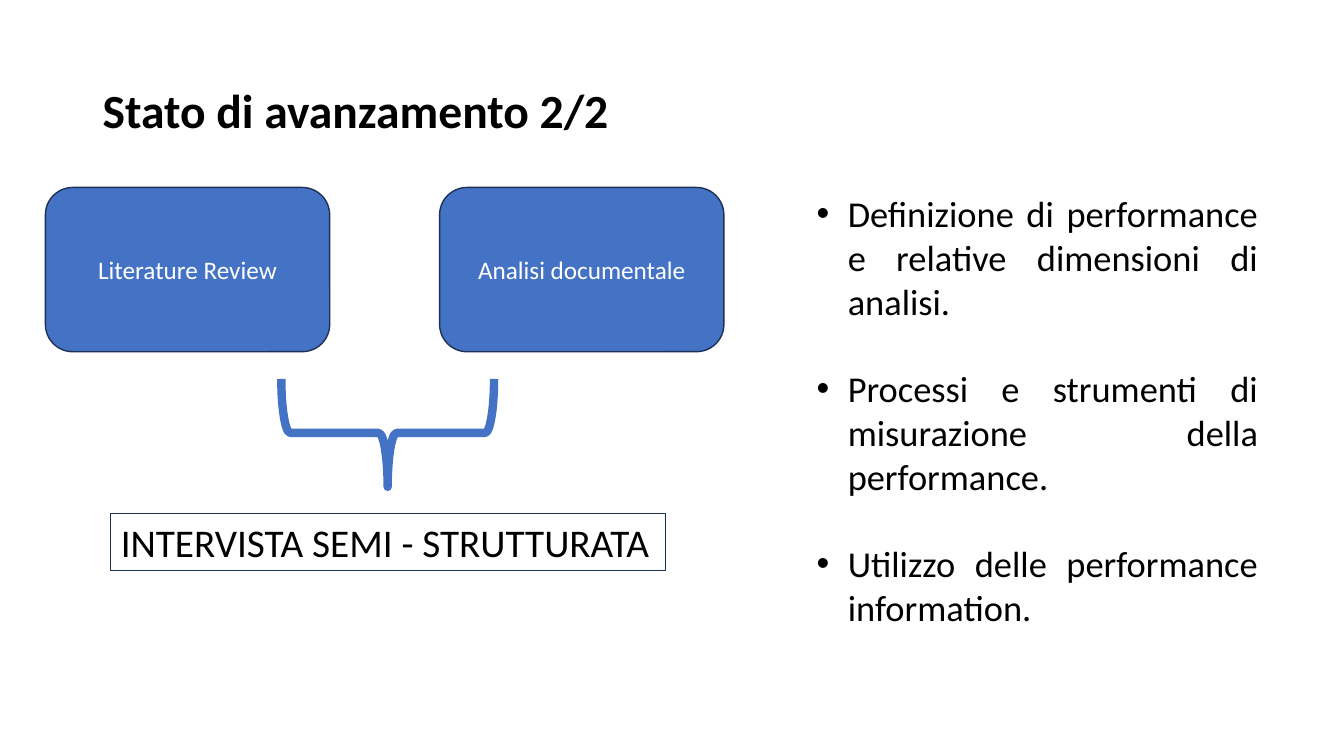
import pptx
import pptx.dml.color
import pptx.enum.shapes
import pptx.enum.text
import pptx.util
from lxml import etree

Inches = pptx.util.Inches
Pt = pptx.util.Pt
SHAPES = pptx.enum.shapes.MSO_SHAPE
ALIGN = pptx.enum.text.PP_ALIGN
ANCHOR = pptx.enum.text.MSO_ANCHOR

COLORS = {"blue": "4472C4", "navy": "1E3256", "black": "000000", "white": "FFFFFF"}
SOURCES = ["Literature Review", "Analisi documentale"]
FINDINGS = [
    "Definizione di performance e relative dimensioni di analisi.",
    "Processi e strumenti di misurazione della performance.",
    "Utilizzo delle performance information.",
]


def color(name):
    return pptx.dml.color.RGBColor.from_string(COLORS[name])


def write(shape, lines, size, font_color="black", bold=False, anchor=ANCHOR.TOP, **formats):
    """Fill a shape with one paragraph per line and return the paragraphs."""
    frame = shape.text_frame
    frame.word_wrap = True
    frame.vertical_anchor = anchor
    frame.text = "\n".join(lines)
    for paragraph in frame.paragraphs:
        for name, value in formats.items():
            setattr(paragraph, name, value)
        font = paragraph.runs[0].font
        for name, value in {"name": "Calibri", "size": Pt(size), "bold": bold}.items():
            setattr(font, name, value)
        font.color.rgb = color(font_color)
    return frame.paragraphs


def add_outlined(slide, kind, box, line_color, line_width, fill=None):
    shape = slide.shapes.add_shape(kind, *map(Inches, box))
    shape.shadow.inherit = False
    if fill:
        shape.fill.solid()
        shape.fill.fore_color.rgb = color(fill)
    else:
        shape.fill.background()
    shape.line.color.rgb = color(line_color)
    shape.line.width = Pt(line_width)
    return shape


def add_title(slide, box):
    title = slide.shapes.add_textbox(*map(Inches, box))
    write(title, ["Stato di avanzamento 2/2"], 34, bold=True,
          anchor=ANCHOR.MIDDLE, line_spacing=0.9)


def add_method(slide, left, top):
    """Two sources joined by a brace that points down to the interview."""
    for index, source in enumerate(SOURCES):
        box = (left + index * 3.91, top, 2.82, 1.63)
        card = add_outlined(slide, SHAPES.ROUNDED_RECTANGLE, box, "navy", 1, "blue")
        write(card, [source], 18, "white", anchor=ANCHOR.MIDDLE, alignment=ALIGN.CENTER)

    brace_box = (left + 2.86, top + 1.38, 1.07, 2.11)
    brace = add_outlined(slide, SHAPES.LEFT_BRACE, brace_box, "blue", 6)
    brace.rotation = 270

    interview_box = (left + 0.65, top + 3.23, 5.5, 0.57)
    interview = add_outlined(slide, SHAPES.RECTANGLE, interview_box, "navy", 0.75)
    write(interview, ["INTERVISTA SEMI - STRUTTURATA"], 28, alignment=ALIGN.LEFT)


def add_findings(slide, box):
    findings = slide.shapes.add_textbox(*map(Inches, box))
    paragraphs = write(findings, FINDINGS, 26, alignment=ALIGN.JUSTIFY, space_after=Pt(31.5))
    for paragraph in paragraphs:
        properties = paragraph._p.get_or_add_pPr()
        properties.set("marL", str(Inches(0.31)))
        properties.set("indent", str(-Inches(0.31)))
        namespace = "{" + properties.nsmap["a"] + "}"
        etree.SubElement(properties, namespace + "buFont", typeface="Arial")
        etree.SubElement(properties, namespace + "buChar", char="•")


def main():
    presentation = pptx.Presentation()
    presentation.slide_width = Inches(13.33)
    presentation.slide_height = Inches(7.5)
    slide = presentation.slides.add_slide(presentation.slide_layouts[6])
    add_title(slide, (0.92, 0.4, 11.5, 1.45))
    add_method(slide, 0.45, 1.86)
    add_findings(slide, (8, 1.85, 4.58, 4.48))
    presentation.save("out.pptx")


if __name__ == "__main__":
    main()
